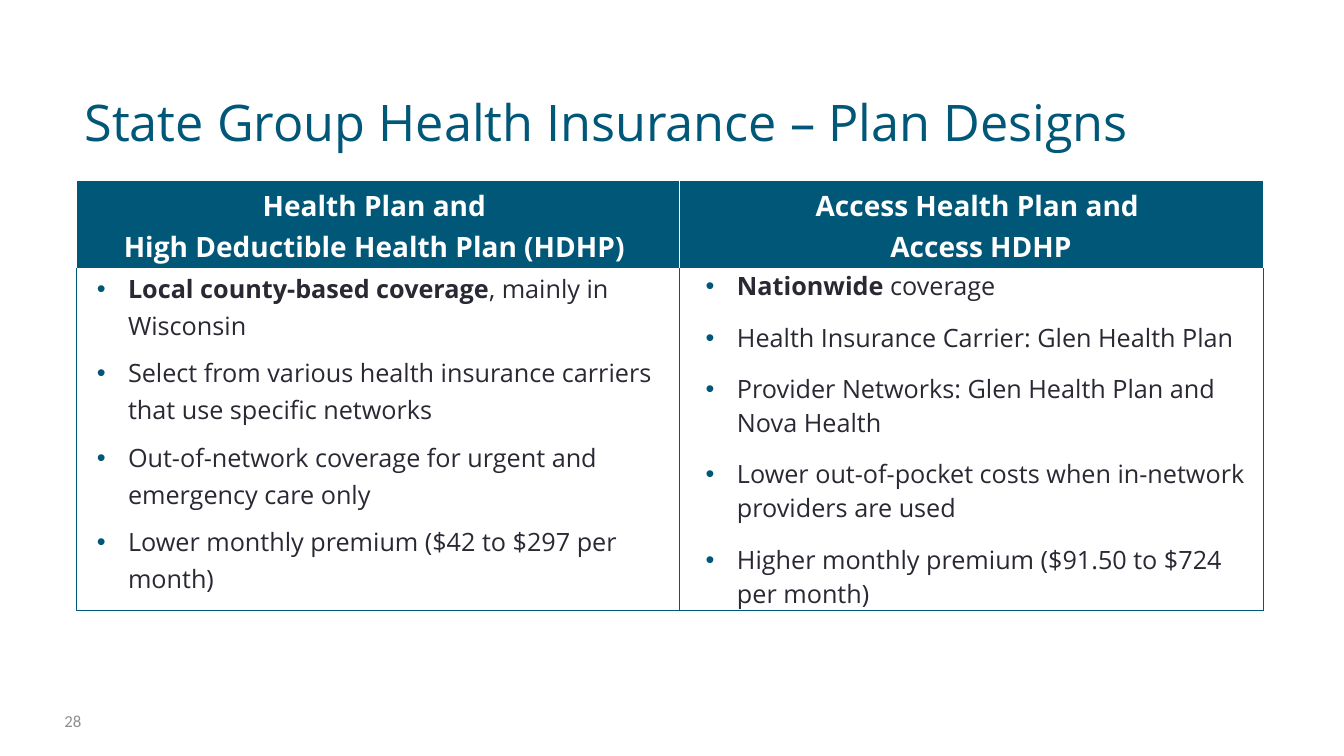
from lxml import etree
from pptx import Presentation
from pptx.dml.color import RGBColor
from pptx.enum.text import MSO_ANCHOR, PP_ALIGN
from pptx.oxml.ns import qn
from pptx.util import Emu, Pt

CENTER = PP_ALIGN.CENTER
MIDDLE, BOTTOM, TOP = MSO_ANCHOR.MIDDLE, MSO_ANCHOR.BOTTOM, MSO_ANCHOR.TOP

TEAL, WHITE, INK, GRAY = "005777", "FFFFFF", "292934", "8E8E90"
FONT = "Open Sans"

HEADS = [
    "Health Plan and \vHigh Deductible Health Plan (HDHP) ",
    "Access Health Plan and \vAccess HDHP",
]
# Each point is a bold lead and the rest
LOCAL = [
    ("Local county-based coverage", ", mainly in Wisconsin"),
    ("", "Select from various health insurance carriers that use specific networks"),
    ("", "Out-of-network coverage for urgent and emergency care only"),
    ("", "Lower monthly premium ($42 to $297 per month)"),
]
ACCESS = [
    ("Nationwide", " coverage"),
    ("", "Health Insurance Carrier: Glen Health Plan"),
    ("", "Provider Networks: Glen Health Plan and Nova Health"),
    ("", "Lower out-of-pocket costs when in-network providers are used"),
    ("", "Higher monthly premium ($91.50 to $724 per month)"),
]


def px(n):
    """100 px to the inch."""
    return Emu(n * 9144)


def color(code):
    return RGBColor.from_string(code)


def style(run, size, code, bold=False, font=FONT):
    run.font.name = font
    run.font.size = Pt(size)
    run.font.bold = bold
    run.font.color.rgb = color(code)


def add_label(slide, box, text, size, code, anchor, font=FONT):
    frame = slide.shapes.add_textbox(*map(px, box)).text_frame
    frame.word_wrap = True
    frame.vertical_anchor = anchor
    frame.text = text
    style(frame.paragraphs[0].runs[0], size, code, font=font)


def set_edges(cell, **edges):
    """Draw 1 pt borders; keys are L, R, T and B."""
    props = cell._tc.get_or_add_tcPr()
    for spot, side in enumerate("LRTB"):
        line = etree.Element(qn("a:ln" + side), w=str(Pt(1)))
        fill = etree.SubElement(line, qn("a:solidFill"))
        etree.SubElement(fill, qn("a:srgbClr"), val=edges[side])
        props.insert(spot, line)


def set_cell(cell, anchor):
    cell.margin_left = cell.margin_right = px(7)
    cell.margin_top, cell.margin_bottom = px(1), 0
    cell.vertical_anchor = anchor


def fill_head(cell, text, indent):
    set_cell(cell, MIDDLE)
    cell.fill.solid()
    cell.fill.fore_color.rgb = color(TEAL)
    set_edges(cell, L=WHITE, R=WHITE, T=WHITE, B=WHITE)
    para = cell.text_frame.paragraphs[0]
    para.text = text
    para.alignment = CENTER
    para.line_spacing = 1.07
    para.space_after = Pt(8)
    para._p.get_or_add_pPr().set("marL", str(px(indent)))
    for run in para.runs:
        style(run, 20, WHITE, True)


def add_bullet(para, indent):
    props = para._p.get_or_add_pPr()
    props.set("marL", str(px(indent)))
    props.set("indent", str(px(-31)))
    tint = etree.SubElement(props, qn("a:buClr"))
    etree.SubElement(tint, qn("a:srgbClr"), val=TEAL)
    etree.SubElement(props, qn("a:buFont"), typeface="Arial")
    etree.SubElement(props, qn("a:buChar"), char="•")


def fill_list(cell, points, indent, pitch, before, after):
    set_cell(cell, TOP)
    cell.fill.background()
    set_edges(cell, L=TEAL, R=TEAL, T=WHITE, B=TEAL)
    frame = cell.text_frame
    for i, (lead, rest) in enumerate(points):
        para = frame.add_paragraph() if i else frame.paragraphs[0]
        add_bullet(para, indent)
        para.line_spacing = pitch
        para.space_before = Pt(before if i else 0)
        para.space_after = Pt(after)
        for text, bold in ((lead, True), (rest, False)):
            if text:
                run = para.add_run()
                run.text = text
                style(run, 18, INK, bold)


def add_plans(slide):
    grid = slide.shapes.add_table(2, 2, px(76), px(179), px(1177), px(427)).table
    grid.horz_banding = False
    for col, wide in zip(grid.columns, (598, 579)):
        col.width = px(wide)
    for row, high in zip(grid.rows, (87, 340)):
        row.height = px(high)
    for i, (text, indent) in enumerate(zip(HEADS, (0, 19))):
        fill_head(grid.cell(0, i), text, indent)
    fill_list(grid.cell(1, 0), LOCAL, 44, 1.07, 0, 8)
    fill_list(grid.cell(1, 1), ACCESS, 50, 1.0, 6, 6)


def main():
    deck = Presentation()
    deck.slide_width, deck.slide_height = px(1333), px(750)
    slide = deck.slides.add_slide(deck.slide_layouts[6])

    # Title
    add_label(slide, (74, 30, 1194, 125),
              "State Group Health Insurance – Plan Designs", 36, TEAL, BOTTOM)
    # Plan table
    add_plans(slide)
    # Page number
    add_label(slide, (54, 695, 56, 40), "28", 12, GRAY, MIDDLE, "Calibri")

    deck.save("out.pptx")


if __name__ == "__main__":
    main()
